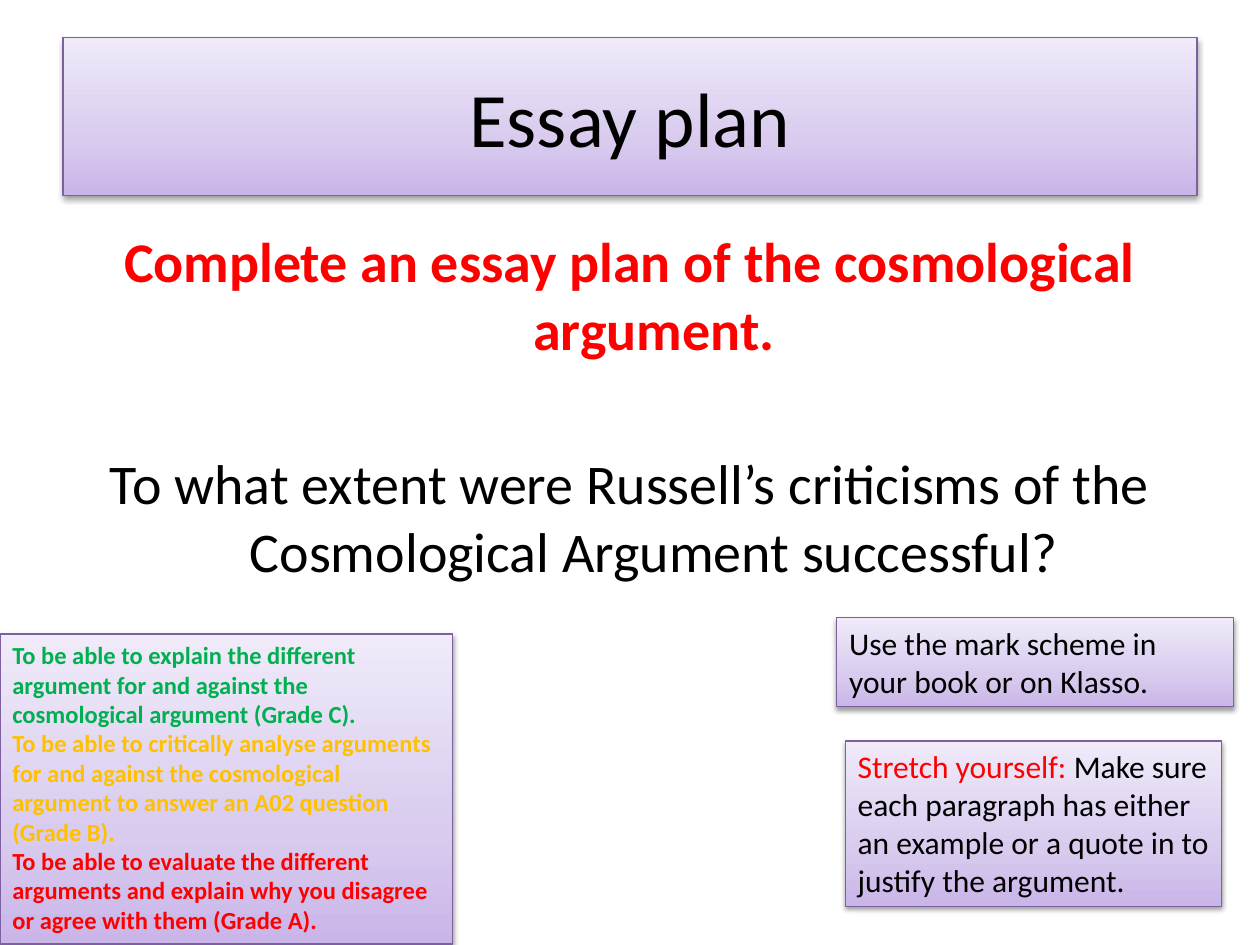
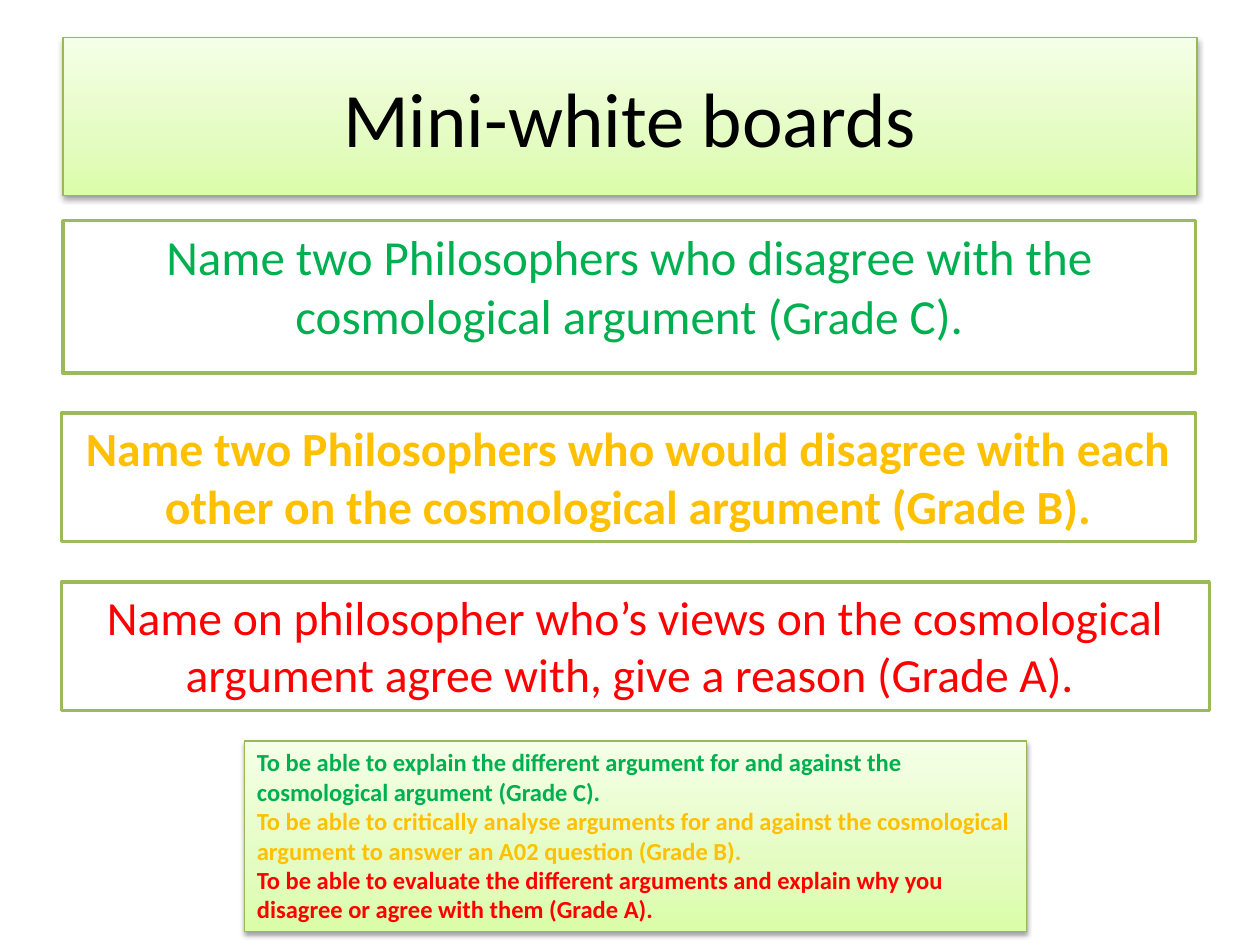
from dataclasses import dataclass
from typing import NamedTuple

from lxml.etree import SubElement as Sub
from pptx import Presentation
from pptx.dml.color import RGBColor as Rgb
from pptx.enum.shapes import MSO_SHAPE as Kind
from pptx.enum.text import MSO_ANCHOR as Anchor, MSO_AUTO_SIZE as Fit, PP_ALIGN as Align
from pptx.oxml.ns import qn
from pptx.util import Cm, Pt


class Tint(NamedTuple):
    stops: tuple[tuple[int, str], ...]
    edge: str


@dataclass(frozen=True)
class Theme:
    face: str = "Calibri"
    black: str = "000000"
    white: str = "FFFFFF"
    green: str = "00B050"
    amber: str = "FFC000"
    red: str = "FF0000"
    frame: str = "9BBB59"
    lilac: Tint = Tint(((0, "C9B5E8"), (35, "D8CBEE"), (100, "F0EAF9")), "7D60A0")
    lime: Tint = Tint(((0, "DAFDA7"), (35, "E4FCC2"), (100, "F5FFE7")), "98B955")
    head: float = 44
    lead: float = 32
    ask: float = 28
    trim: float = 27
    query: float = 27.2
    note: float = 18
    goal: float = 14


LOOK = Theme()


class Place(NamedTuple):
    left: float
    top: float
    width: float
    height: float

    def cm(self) -> tuple:
        return tuple(Cm(side) for side in self)


class Piece(NamedTuple):
    text: str
    ink: str | None = None
    size: float | None = None


@dataclass(frozen=True)
class Line:
    bits: tuple[Piece, ...]
    size: float
    ink: str = LOOK.black
    bold: bool = False
    mid: bool = False
    hang: float = 0
    gap: float = 0


@dataclass(frozen=True)
class Box:
    place: Place
    lines: tuple[Line, ...]


def plain(text: str, size: float, ink: str = LOOK.black, **more) -> Line:
    return Line((Piece(text),), size, ink, **more)


HEAD = Place(1.27, 0.76, 22.86, 3.18)
LEAD = Box(Place(1.27, 4.45, 22.86, 12.57), (
    plain("Complete an essay plan of the cosmological argument.",
          LOOK.lead, LOOK.red, bold=True, mid=True, hang=0.97),
    plain("To what extent were Russell’s criticisms of the Cosmological Argument successful?",
          LOOK.lead, mid=True, hang=0.97, gap=50),
))
GOALS = tuple(plain(text, LOOK.goal, ink, bold=True) for text, ink in (
    ("To be able to explain the different argument for and against the "
     "cosmological argument (Grade C).", LOOK.green),
    ("To be able to critically analyse arguments for and against the cosmological "
     "argument to answer an A02 question (Grade B).", LOOK.amber),
    ("To be able to evaluate the different arguments and explain why you disagree "
     "or agree with them (Grade A).", LOOK.red),
))
NOTES = (
    Box(Place(0, 12.78, 9.12, 6.25), GOALS),
    Box(Place(17.04, 14.94, 7.59, 3.33), (Line((
        Piece("Stretch yourself: ", LOOK.red),
        Piece("Make sure each paragraph has either an example or a quote in to "
              "justify the argument.")), LOOK.note),)),
    Box(Place(16.87, 12.45, 8, 1.8), (
        plain("Use the mark scheme in your book or on Klasso.", LOOK.note),)),
)
ASKS = (
    Box(Place(1.27, 4.45, 22.83, 3.07), (Line((
        Piece("Name two Philosophers who disagree with the cosmological argument ("),
        Piece("Grade", size=LOOK.trim),
        Piece(" C).")), LOOK.ask, LOOK.green, mid=True),)),
    Box(Place(1.24, 8.33, 22.86, 2.59), (
        plain("Name two Philosophers who would disagree with each other on the "
              "cosmological argument (Grade B).",
              LOOK.query, LOOK.amber, bold=True, mid=True),)),
    Box(Place(1.24, 11.73, 23.14, 2.59), (
        plain("Name on philosopher who’s views on the cosmological argument agree "
              "with, give a reason (Grade A). ", LOOK.query, LOOK.red, mid=True),)),
)
RECAP = Box(Place(4.93, 14.94, 15.77, 3.84), GOALS)


def style(font, size: float, ink: str, bold: bool) -> None:
    font.name = LOOK.face
    font.size = Pt(size)
    font.bold = bold
    font.color.rgb = Rgb.from_string(ink)


def write(frame, lines: tuple[Line, ...]) -> None:
    frame.word_wrap = True
    frame.vertical_anchor = Anchor.TOP
    for spot, line in enumerate(lines):
        para = frame.add_paragraph() if spot else frame.paragraphs[0]
        para.alignment = Align.CENTER if line.mid else Align.LEFT
        if line.gap:
            para.space_before = Pt(line.gap)
        if line.hang:
            props = para._p.get_or_add_pPr()
            props.set("marL", str(Cm(line.hang)))
            props.set("indent", str(-Cm(line.hang)))
        style(para.font, line.size, line.ink, line.bold)
        for bit in line.bits:
            run = para.add_run()
            run.text = bit.text
            style(run.font, bit.size or line.size, bit.ink or line.ink, line.bold)


def shade(shape, tint: Tint) -> None:
    shape.fill.gradient()
    shape.fill.gradient_angle = 90
    props = shape._element.spPr
    stops = props.find(qn("a:gradFill")).find(qn("a:gsLst"))
    for old in list(stops):
        stops.remove(old)
    for spot, ink in tint.stops:
        stop = Sub(stops, qn("a:gs"), pos=str(spot * 1000))
        Sub(stop, qn("a:srgbClr"), val=ink)
    shape.line.color.rgb = Rgb.from_string(tint.edge)
    shape.line.width = Pt(0.75)
    shape.shadow.inherit = False
    cast = Sub(props.find(qn("a:effectLst")), qn("a:outerShdw"),
               blurRad=str(Pt(3.1)), dist=str(Pt(1.6)), dir="5400000", rotWithShape="0")
    dark = Sub(cast, qn("a:srgbClr"), val=LOOK.black)
    Sub(dark, qn("a:alpha"), val="38000")


def add_page(deck, text: str, tint: Tint):
    page = deck.slides.add_slide(deck.slide_layouts[5])
    title = page.shapes.title
    title.left, title.top, title.width, title.height = HEAD.cm()
    shade(title, tint)
    write(title.text_frame, (plain(text, LOOK.head, mid=True),))
    title.text_frame.vertical_anchor = Anchor.MIDDLE
    return page


def add_note(page, box: Box, tint: Tint) -> None:
    shape = page.shapes.add_shape(Kind.RECTANGLE, *box.place.cm())
    shade(shape, tint)
    write(shape.text_frame, box.lines)
    shape.text_frame.auto_size = Fit.SHAPE_TO_FIT_TEXT


def add_ask(page, box: Box) -> None:
    shape = page.shapes.add_shape(Kind.RECTANGLE, *box.place.cm())
    shape.shadow.inherit = False
    shape.fill.solid()
    shape.fill.fore_color.rgb = Rgb.from_string(LOOK.white)
    shape.line.color.rgb = Rgb.from_string(LOOK.frame)
    shape.line.width = Pt(2)
    write(shape.text_frame, box.lines)


def main() -> None:
    deck = Presentation()
    deck.slide_width, deck.slide_height = Cm(25.4), Cm(19.05)

    essay = add_page(deck, "Essay plan", LOOK.lilac)
    lead = essay.shapes.add_textbox(*LEAD.place.cm())
    write(lead.text_frame, LEAD.lines)
    for note in NOTES:
        add_note(essay, note, LOOK.lilac)

    boards = add_page(deck, "Mini-white boards", LOOK.lime)
    for ask in ASKS:
        add_ask(boards, ask)
    add_note(boards, RECAP, LOOK.lime)

    deck.save("out.pptx")


if __name__ == "__main__":
    main()
